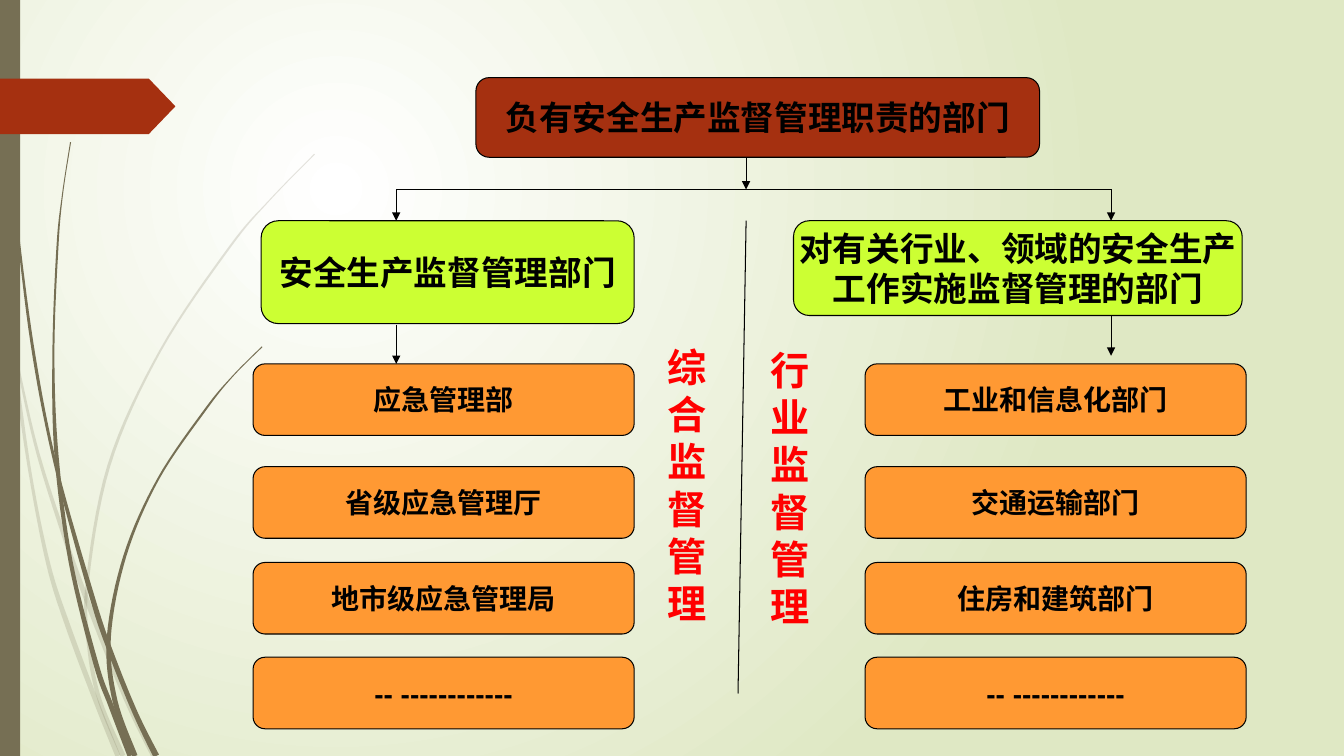
from math import hypot

from lxml import etree
from pptx import Presentation
from pptx import util as u
from pptx.dml.color import RGBColor
from pptx.enum import shapes, text
from pptx.oxml import parse_xml
from pptx.oxml.ns import nsdecls, qn

BLACK, OLIVE, RUST = "000000", "766F54", "A53010"
LIME, ORANGE, RED = "CCFF33", "FF9933", "FF0000"

PALE_STRANDS = [
    [(0.14, 3.6, 0.04), (0.3, 4.7, 0.03), (0.48, 5.6, 0.04), (0.67, 6.2, 0.05),
     (0.95, 6.95, 0.05), (1.17, 7.5, 0.05)],
    [(0.14, 3.45, 0.02), (0.35, 4.4, 0.03), (0.6, 5.21, 0.04), (0.86, 5.95, 0.05),
     (1.25, 6.93, 0.05), (1.53, 7.5, 0.06)],
    [(3.12, 1.53, 0.01), (2.68, 1.98, 0.01), (2.28, 2.45, 0.02), (1.59, 3.48, 0.02),
     (1.08, 4.62, 0.03), (0.86, 5.84, 0.03), (0.89, 6.46, 0.04), (0.99, 6.95, 0.04),
     (1.22, 7.5, 0.05)],
]
DARK_STRANDS = [
    [(0.06, 1.1, 0.01), (0.18, 2.33, 0.02), (0.34, 3.55, 0.03), (0.56, 4.65, 0.03),
     (0.91, 5.91, 0.05), (1.09, 6.45, 0.05), (1.34, 7.07, 0.05), (1.55, 7.5, 0.06)],
    [(0.7, 1.41, 0.01), (0.62, 1.93, 0.01), (0.57, 2.45, 0.02), (0.53, 3.49, 0.02),
     (0.56, 4.51, 0.04), (0.7, 5.57, 0.04), (0.95, 6.58, 0.05), (1.1, 7, 0.05),
     (1.29, 7.5, 0.05)],
    [(2.6, 3.44, 0.01), (2.31, 3.73, 0.01), (2.04, 4.06, 0.02), (1.57, 4.75, 0.02),
     (1.24, 5.51, 0.03), (1.08, 6.32, 0.04), (1.14, 6.95, 0.05), (1.34, 7.5, 0.05)],
]

ROW_TOPS = [3.61, 4.63, 5.58, 6.52]
COLUMNS = {
    2.51: ["应急管理部", "省级应急管理厅", "地市级应急管理局", "-- ------------"],
    8.58: ["工业和信息化部门", "交通运输部门", "住房和建筑部门", "-- ------------"],
}


def length(inches):
    return u.Cm(inches * 2.54)


def color(value):
    return RGBColor.from_string(value)


def set_background(slide):
    background = parse_xml(
        f'<p:bg {nsdecls("p", "a")}><p:bgPr><a:gradFill rotWithShape="1"><a:gsLst>'
        '<a:gs pos="0"><a:srgbClr val="FFFFFF"/></a:gs>'
        '<a:gs pos="100000"><a:srgbClr val="DFE8C4"/></a:gs></a:gsLst>'
        '<a:path path="circle"><a:fillToRect l="50000" t="50000" r="100000" b="100000"/>'
        '</a:path></a:gradFill><a:effectLst/></p:bgPr></p:bg>')
    slide.element.cSld.insert(0, background)


def paint(shape, fill, line=None):
    shape.shadow.inherit = False
    shape.fill.solid()
    shape.fill.fore_color.rgb = color(fill)
    if line:
        shape.line.color.rgb = color(line)
        shape.line.width = u.Pt(0.75)
    else:
        shape.line.fill.background()


def add_shape(slide, kind, left, top, width, height, fill, line=None):
    shape = slide.shapes.add_shape(kind, *map(length, (left, top, width, height)))
    paint(shape, fill, line)
    return shape


def write(shape, words, size, font_color, alignment):
    frame = shape.text_frame
    frame.text = words
    for paragraph in frame.paragraphs:
        paragraph.alignment = alignment
        for run in paragraph.runs:
            run.font.name = "Arial"
            run.font.size = u.Pt(size)
            run.font.bold = True
            run.font.color.rgb = color(font_color)


def add_box(slide, words, left, top, width, height, fill, size):
    box = add_shape(slide, shapes.MSO_SHAPE.FLOWCHART_ALTERNATE_PROCESS,
                    left, top, width, height, fill, BLACK)
    box.text_frame.word_wrap = False
    box.text_frame.vertical_anchor = text.MSO_ANCHOR.MIDDLE
    write(box, words, size, BLACK, text.PP_ALIGN.CENTER)


def add_label(slide, words, left, top):
    label = slide.shapes.add_textbox(*map(length, (left, top, 0.64, 2.93)))
    label.text_frame.word_wrap = True
    write(label, words, 28, RED, text.PP_ALIGN.LEFT)


def add_line(slide, start, end, arrow=False):
    line = slide.shapes.add_connector(shapes.MSO_CONNECTOR.STRAIGHT,
                                      *map(length, start + end))
    line.line.color.rgb = color(BLACK)
    line.line.width = u.Pt(0.75)
    if arrow:
        etree.SubElement(line.line._get_or_add_ln(), qn("a:tailEnd"), type="triangle")
    etree.SubElement(line._element.spPr, qn("a:effectLst"))


def smooth(points, steps=8):
    padded = [points[0], *points, points[-1]]
    curve = []
    for a, b, c, d in zip(padded, padded[1:], padded[2:], padded[3:]):
        for step in range(steps):
            t = step / steps
            curve.append([
                q + t * (r - p) / 2 + t * t * (2 * p - 5 * q + 4 * r - s) / 2
                + t ** 3 * (3 * q - p - 3 * r + s) / 2
                for p, q, r, s in zip(a, b, c, d)])
    return curve + [points[-1]]


def add_strand(slide, points, alpha=None):
    curve = smooth(points)
    left_edge, right_edge = [], []
    for index, (x, y, width) in enumerate(curve):
        before, after = curve[max(index - 1, 0)], curve[min(index + 1, len(curve) - 1)]
        dx, dy = after[0] - before[0], after[1] - before[1]
        half = width / 2 / hypot(dx, dy)
        left_edge.append((length(x - dy * half), length(y + dx * half)))
        right_edge.append((length(x + dy * half), length(y - dx * half)))
    outline = left_edge + right_edge[::-1]
    builder = slide.shapes.build_freeform(*outline[0])
    builder.add_line_segments(outline[1:], close=True)
    strand = builder.convert_to_shape()
    paint(strand, OLIVE)
    if alpha:
        fill_color = strand._element.spPr.find(qn("a:solidFill"))[0]
        etree.SubElement(fill_color, qn("a:alpha"), val=str(alpha * 1000))


def add_decoration(slide):
    for strand in PALE_STRANDS:
        add_strand(slide, strand, alpha=20)
    for strand in DARK_STRANDS:
        add_strand(slide, strand)
    add_shape(slide, shapes.MSO_SHAPE.RECTANGLE, 0, 0, 0.2, 7.5, OLIVE)
    banner = add_shape(slide, shapes.MSO_SHAPE.PENTAGON, 0, 0.78, 1.74, 0.55, RUST)
    banner.adjustments[0] = 0.48


def main():
    presentation = Presentation()
    presentation.slide_width = length(13.33)
    presentation.slide_height = length(7.5)
    slide = presentation.slides.add_slide(presentation.slide_layouts[6])
    set_background(slide)
    add_decoration(slide)

    add_box(slide, "负有安全生产监督管理职责的部门", 4.72, 0.77, 5.59, 0.79, RUST, 24)
    add_box(slide, "安全生产监督管理部门", 2.59, 2.19, 3.7, 1.02, LIME, 24)
    add_box(slide, "对有关行业、领域的安全生产\n工作实施监督管理的部门",
            7.87, 2.19, 4.45, 0.94, LIME, 24)
    for left, departments in COLUMNS.items():
        for top, department in zip(ROW_TOPS, departments):
            add_box(slide, department, left, top, 3.78, 0.71, ORANGE, 20)

    middle, branch_y = 7.4, 1.88
    add_line(slide, (middle, 1.56), (middle, branch_y), arrow=True)
    add_line(slide, (3.93, branch_y), (11.02, branch_y))
    for x, box_bottom, arrow_end in [(3.93, 3.22, 3.61), (11.02, 3.14, 3.53)]:
        add_line(slide, (x, branch_y), (x, 2.19), arrow=True)
        add_line(slide, (x, box_bottom), (x, arrow_end), arrow=True)
    add_line(slide, (middle, 2.19), (7.32, 6.88))

    add_label(slide, "综合监督管理", 6.52, 3.36)
    add_label(slide, "行业监督管理", 7.54, 3.39)
    presentation.save("out.pptx")


if __name__ == "__main__":
    main()
